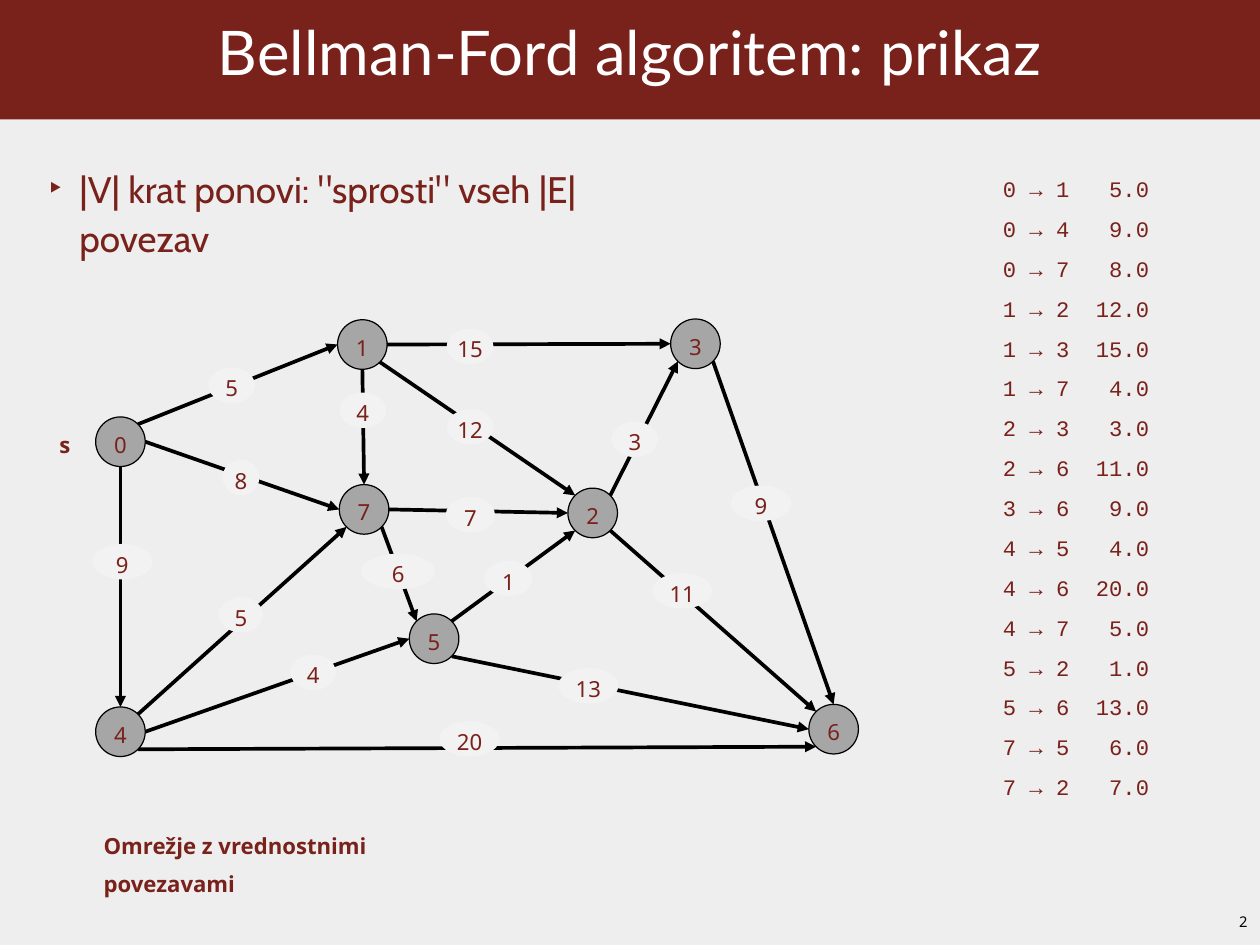
from math import cos, radians, sin

from pptx import Presentation
from pptx.dml.color import RGBColor
from pptx.enum.shapes import MSO_CONNECTOR, MSO_SHAPE
from pptx.enum.text import MSO_ANCHOR, MSO_AUTO_SIZE, PP_ALIGN
from pptx.oxml.ns import qn
from pptx.util import Pt
from lxml import etree

LEFT, CENTER = PP_ALIGN.LEFT, PP_ALIGN.CENTER
TOP, MIDDLE = MSO_ANCHOR.TOP, MSO_ANCHOR.MIDDLE
OVAL, LINE = MSO_SHAPE.OVAL, MSO_CONNECTOR.STRAIGHT
FIXED = MSO_AUTO_SIZE.NONE

# Content
TITLE = "Bellman-Ford algoritem: prikaz"
POINT = '|V| krat ponovi: "sprosti" vseh |E| povezav'
NOTE = "Omrežje z vrednostnimi povezavami"
SOURCE = "s"
PAGE = "2"

# Centre of each node
NODES = {
    0: (97.9, 359), 1: (294.5, 280), 2: (481.7, 416.9), 3: (565.2, 279.4),
    4: (97.9, 594.7), 5: (352.8, 519.1), 6: (677.5, 592.6), 7: (295.9, 414),
}
# From, to, weight, side left, side met, label centre x and y, label width
EDGES = [
    (0, 1, 5, "NE", "W", 188.3, 313.2, 38),
    (0, 4, 9, "S", "N", 99.4, 456.5, 49),
    (0, 7, 8, "E", "W", 195.8, 388.1, 30),
    (1, 2, 12, "SE", "NW", 382, 347, 38),
    (1, 3, 15, "E", "W", 382, 281.5, 38),
    (1, 7, 4, "S", "N", 294.8, 333.4, 38),
    (2, 3, 3, "NE", "SW", 515.9, 357.1, 38),
    (2, 6, 11, "SE", "NW", 554.4, 480.2, 49),
    (3, 6, 9, "SE", "N", 618.5, 409, 49),
    (4, 5, 4, "E", "W", 254.5, 546.5, 37),
    (4, 6, 20, "SE", "SW", 381.6, 600.5, 49),
    (4, 7, 5, "NE", "SW", 195.8, 499.7, 36),
    (5, 2, 1, "NE", "SW", 413.3, 470.2, 39),
    (5, 6, 13, "SE", "W", 478.1, 557.3, 49),
    (7, 5, 6, "SE", "NW", 323.6, 464.4, 60),
    (7, 2, 7, "E", "W", 382.3, 418.3, 40),
]

# Look
COLORS = {"back": "EEEEEE", "brand": "79211B", "node": "A6A6A6",
          "label": "F2F2F2", "white": "FFFFFF", "black": "000000"}
SIDES = ("E", "SE", "S", "SW", "W", "NW", "N", "NE")
NODE_SIZE = 40.3
LABEL_HIGH = 28.8
TAB = 118.8


def color(name):
    return RGBColor.from_string(COLORS[name])


def write(shape, *lines, font="Noto Sans", size=18, ink="brand", bold=False,
          align=LEFT, anchor=TOP, space=1.0, inset=(4.3, 0, 4.3, 0)):
    frame = shape.text_frame
    frame.word_wrap = True
    frame.auto_size = FIXED
    frame.vertical_anchor = anchor
    (frame.margin_left, frame.margin_top,
     frame.margin_right, frame.margin_bottom) = map(Pt, inset)
    frame.text = "\n".join(lines)
    for para in frame.paragraphs:
        para.alignment = align
        para.line_spacing = space
        para.space_before = Pt(0)
        for run in para.runs:
            run.font.name = font
            run.font.size = Pt(size)
            run.font.bold = bold
            run.font.color.rgb = color(ink)
    return frame.paragraphs


def place(shape, left, top, width, height):
    shape.left, shape.top = Pt(left), Pt(top)
    shape.width, shape.height = Pt(width), Pt(height)
    return shape


def add_box(slide, left, top, width, height):
    return slide.shapes.add_textbox(*map(Pt, (left, top, width, height)))


def add_oval(slide, text, x, y, width, height, fill, edge=None):
    box = map(Pt, (x - width / 2, y - height / 2, width, height))
    oval = slide.shapes.add_shape(OVAL, *box)
    oval.shadow.inherit = False
    oval.fill.solid()
    oval.fill.fore_color.rgb = color(fill)
    if edge:
        oval.line.color.rgb = color(edge)
        oval.line.width = Pt(1)
    else:
        oval.line.fill.background()
    write(oval, str(text), align=CENTER, anchor=MIDDLE, space=1.2,
          inset=(0, 0, 0, 0))


def site(node, side):
    x, y = NODES[node]
    angle = radians(45 * SIDES.index(side))
    reach = NODE_SIZE / 2
    return Pt(x + reach * cos(angle)), Pt(y + reach * sin(angle))


def add_arrow(slide, start, end):
    arrow = slide.shapes.add_connector(LINE, *start, *end)
    arrow.line.color.rgb = color("black")
    arrow.line.width = Pt(3)
    props = arrow._element.spPr
    etree.SubElement(props.find(qn("a:ln")), qn("a:tailEnd"), type="triangle")
    etree.SubElement(props, qn("a:effectLst"))


def main():
    deck = Presentation()
    deck.slide_width, deck.slide_height = Pt(1024), Pt(768)
    slide = deck.slides.add_slide(deck.slide_layouts[1])
    slide.background.fill.solid()
    slide.background.fill.fore_color.rgb = color("back")

    # Title band
    title = place(slide.shapes.title, 0, 0, 1028, 97)
    title.fill.solid()
    title.fill.fore_color.rgb = color("brand")
    write(title, TITLE, font="Lato", size=50, ink="white", align=CENTER,
          anchor=MIDDLE, space=0.7, inset=(4.3, 4.3, 8.6, 4.3))

    # Bullet
    body = place(slide.placeholders[1], 30.2, 134.6, 491.8, 73.4)
    para = write(body, POINT, font="Cabin", size=30, anchor=MIDDLE,
                 space=1.1, inset=(4.3, 4.3, 8.6, 4.3))[0]
    props = para._p.get_or_add_pPr()
    props.set("marL", str(Pt(30)))
    props.set("indent", str(Pt(-25)))
    etree.SubElement(props, qn("a:buChar"), char="‣")

    # Graph: arrows, then nodes, then weights
    for a, b, _, out, into, *_ in EDGES:
        add_arrow(slide, site(a, out), site(b, into))
    for name, (x, y) in NODES.items():
        add_oval(slide, name, x, y, NODE_SIZE, NODE_SIZE, "node", "black")
    for *_, x, y, width in EDGES:
        weight = next(e[2] for e in EDGES if e[5:] == (x, y, width))
        add_oval(slide, weight, x, y, width, LABEL_HIGH, "label")

    # Edge list, weights aligned right on a tab stop
    rows = [f"{a} → {b}\t{weight:.1f}" for a, b, weight, *_ in EDGES]
    table = add_box(slide, 810.7, 131.8, 129, 523.4)
    for para in write(table, *rows, font="Courier New", space=1.5):
        tabs = etree.SubElement(para._p.get_or_add_pPr(), qn("a:tabLst"))
        etree.SubElement(tabs, qn("a:tab"), pos=str(Pt(TAB)), algn="r")

    # Captions and page number
    write(add_box(slide, 43.9, 342, 23.8, 28.8), SOURCE, bold=True, space=1.4)
    write(add_box(slide, 79.9, 668.2, 322.6, 30.2), NOTE, bold=True, space=1.4)
    write(add_box(slide, 1000, 738, 24, 23), PAGE, size=12, ink="black",
          inset=(7.2, 3.6, 7.2, 3.6))

    deck.save("out.pptx")


if __name__ == "__main__":
    main()
